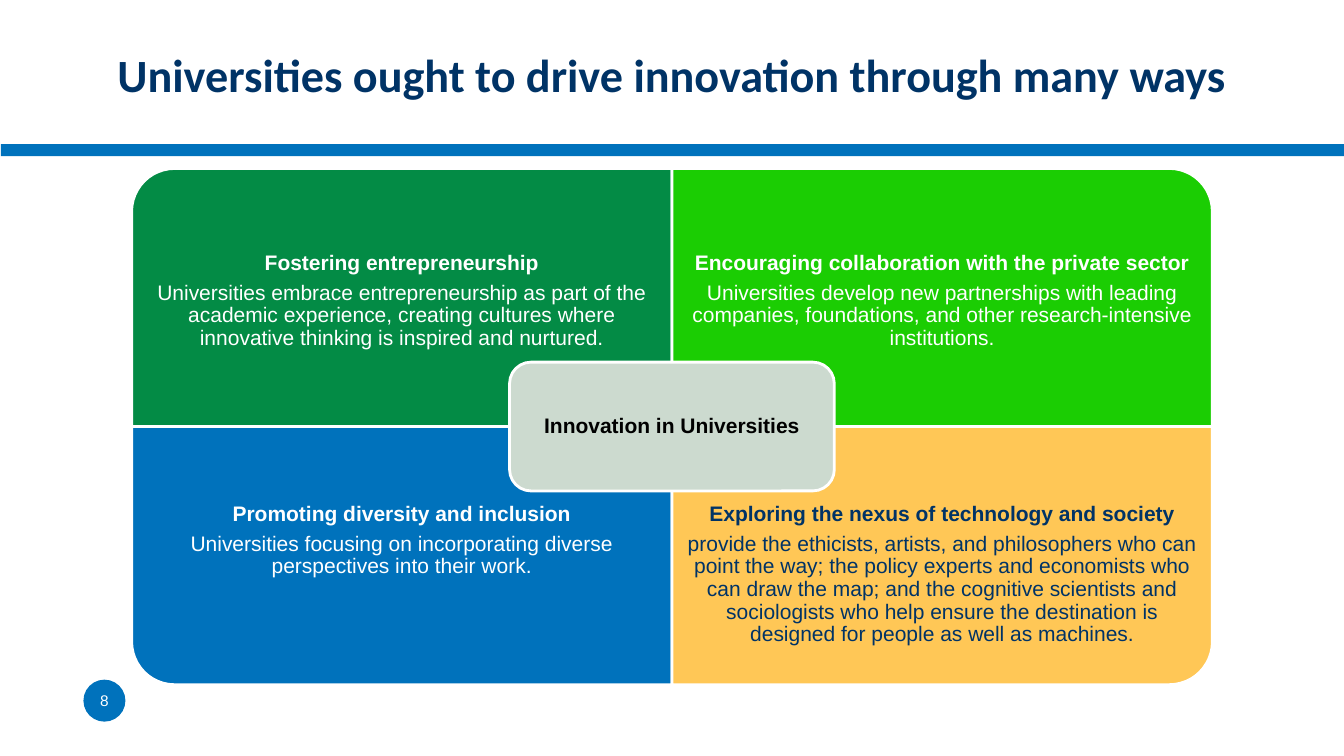
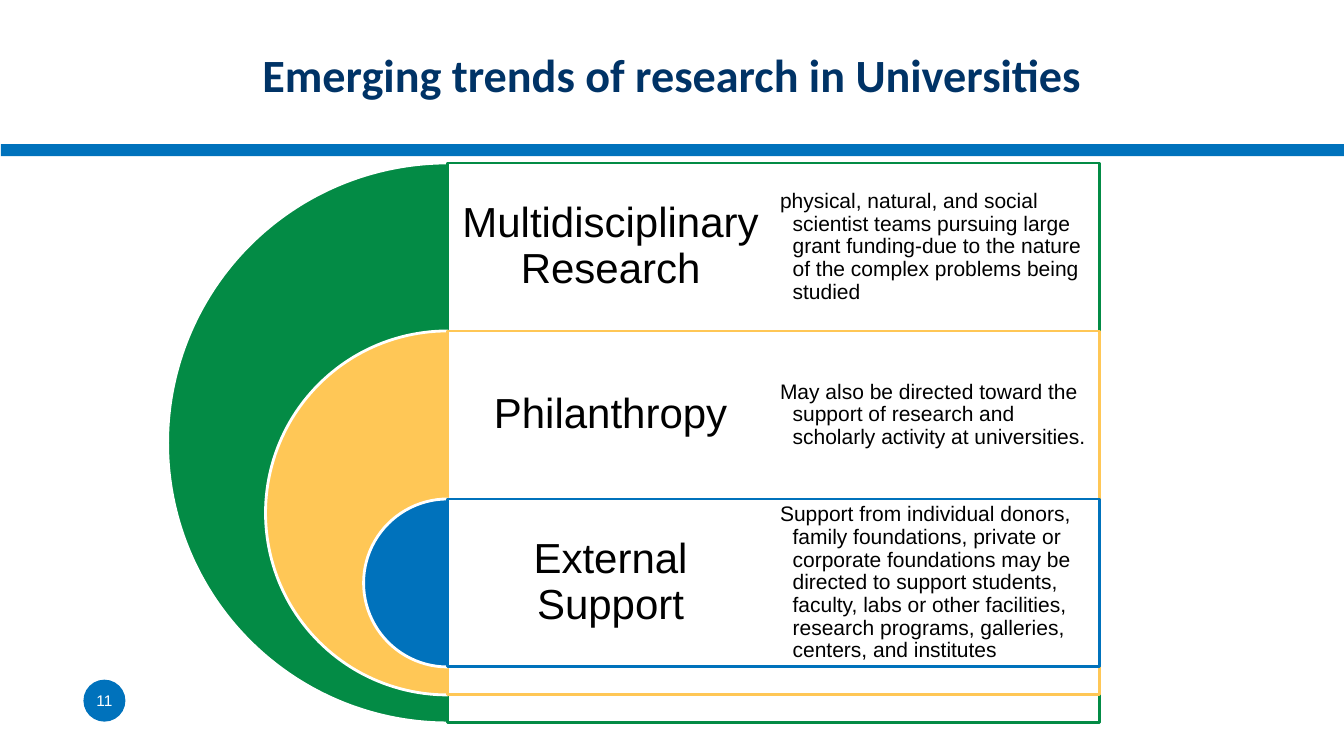
"""Build two slides on innovation and research trends in universities."""
from dataclasses import dataclass

from pptx import Presentation
from pptx import util as u
from pptx.dml.color import RGBColor
from pptx.enum import shapes, text


@dataclass(frozen=True)
class Theme:
    blue: str = "0072BC"
    navy: str = "003366"
    green: str = "038B45"
    lime: str = "1BCD03"
    amber: str = "FFC756"
    sage: str = "CCDACF"
    white: str = "FFFFFF"
    black: str = "000000"
    heading_font: str = "Calibri"
    body_font: str = "Arial"
    title_size: float = 33
    label_size: float = 30
    body_size: float = 15
    number_size: float = 11


theme = Theme()
kinds = shapes.MSO_SHAPE
anchors = text.MSO_ANCHOR
aligns = text.PP_ALIGN
slide_width, slide_height = 960, 540


def add_box(page, kind, place, fill=None, line=None):
    """Add a preset shape, or a text box when kind is None."""
    lengths = [u.Pt(value) for value in place]
    if kind is None:
        return page.shapes.add_textbox(*lengths)
    box = page.shapes.add_shape(kind, *lengths)
    box.shadow.inherit = False
    box.fill.solid()
    box.fill.fore_color.rgb = RGBColor.from_string(fill)
    if line:
        box.line.color.rgb = RGBColor.from_string(line)
        box.line.width = u.Pt(2)
    else:
        box.line.fill.background()
    return box


def write(box, lines, size, color, font=theme.body_font, bold_lines=0, inset=(0, 0),
          anchor=anchors.MIDDLE, align=aligns.CENTER, spacing=0.9, after=0, hanging=0):
    """Write one paragraph per line; inset is (sides, top and bottom)."""
    side, edge = (u.Pt(value) for value in inset)
    frame = box.text_frame
    frame_format = {"word_wrap": True, "vertical_anchor": anchor,
                    "margin_left": side, "margin_right": side,
                    "margin_top": edge, "margin_bottom": edge}
    for name, value in frame_format.items():
        setattr(frame, name, value)
    for index, line in enumerate(lines):
        para = frame.paragraphs[0] if index == 0 else frame.add_paragraph()
        para_format = {"alignment": align, "line_spacing": spacing, "space_after": u.Pt(after)}
        for name, value in para_format.items():
            setattr(para, name, value)
        if hanging:
            properties = para._p.get_or_add_pPr()
            properties.set("marL", str(u.Pt(hanging)))
            properties.set("indent", str(-u.Pt(hanging)))
        span = para.add_run()
        span.text = line
        span_format = {"name": font, "size": u.Pt(size), "bold": index < bold_lines}
        for name, value in span_format.items():
            setattr(span.font, name, value)
        span.font.color.rgb = RGBColor.from_string(color)


deck = Presentation()
deck.slide_width, deck.slide_height = u.Pt(slide_width), u.Pt(slide_height)

pages = []
for number, title in [(8, "Universities ought to drive innovation through many ways"),
                      (11, "Emerging trends of research in Universities")]:
    page = deck.slides.add_slide(deck.slide_layouts[6])
    add_box(page, kinds.RECTANGLE, (0.7, 103, slide_width - 0.7, 8.6), theme.blue)
    badge = add_box(page, kinds.OVAL, (59.6, 485.5, 30, 30), theme.blue)
    write(badge, [str(number)], theme.number_size, theme.white, spacing=1)
    heading = add_box(page, None, (52, 11.5, 856, 83))
    write(heading, [title], theme.title_size, theme.navy, theme.heading_font,
          bold_lines=1, inset=(5, 3), spacing=1)
    pages.append(page)
ways_page, trends_page = pages

center_x, center_y = 480, 304.7
quad_width, quad_height = 386, 184.4
text_height = quad_height * 0.75
ways = [
    (0, 0, 270, theme.green, theme.white, "Fostering entrepreneurship",
     "Universities embrace entrepreneurship as part of the academic experience, creating "
     "cultures where innovative thinking is inspired and nurtured."),
    (1, 0, 0, theme.lime, theme.white, "Encouraging collaboration with the private sector",
     "Universities develop new partnerships with leading companies, foundations, and other "
     "research-intensive institutions."),
    (0, 1, 180, theme.blue, theme.white, "Promoting diversity and inclusion",
     "Universities focusing on incorporating diverse perspectives into their work."),
    (1, 1, 90, theme.amber, theme.navy, "Exploring the nexus of technology and society",
     "provide the ethicists, artists, and philosophers who can point the way; the policy "
     "experts and economists who can draw the map; and the cognitive scientists and "
     "sociologists who help ensure the destination is designed for people as well as machines."),
]
for column, row, turn, fill, color, name, detail in ways:
    left = center_x + (column - 1) * quad_width
    top = center_y + (row - 1) * quad_height
    width, height = (quad_height, quad_width) if turn % 180 else (quad_width, quad_height)
    place = (left + (quad_width - width) / 2, top + (quad_height - height) / 2, width, height)
    quadrant = add_box(ways_page, kinds.ROUND_1_RECTANGLE, place, fill, theme.white)
    quadrant.rotation = turn
    text_top = top + row * (quad_height - text_height)
    caption = add_box(ways_page, None, (left, text_top, quad_width, text_height))
    write(caption, [name, detail], theme.body_size, color, bold_lines=1, inset=(8.5, 8.5),
          anchor=anchors.TOP if row else anchors.BOTTOM, after=5.25)

hub_width, hub_height = 232, 92
hub = add_box(ways_page, kinds.ROUNDED_RECTANGLE,
              (center_x - hub_width / 2, center_y - hub_height / 2, hub_width, hub_height),
              theme.sage, theme.white)
write(hub, ["Innovation in Universities"], theme.body_size, theme.black,
      bold_lines=1, inset=(9, 9), after=5.25)

axis_x, first_top, row_height = 319.7, 116.4, 120
column_width = 233
trends = [
    (400, theme.green, "Multidisciplinary Research",
     "physical, natural, and social scientist teams pursuing large grant funding-due to "
     "the nature of the complex problems being studied"),
    (260, theme.amber, "Philanthropy",
     "May also be directed toward the support of research and scholarly activity at "
     "universities."),
    (120, theme.blue, "External Support",
     "Support from individual donors, family foundations, private or corporate foundations "
     "may be directed to support students, faculty, labs or other facilities, research "
     "programs, galleries, centers, and institutes"),
]
for index, (size, color, name, detail) in enumerate(trends):
    top = first_top + index * row_height
    half_disc = add_box(trends_page, kinds.PIE, (axis_x - size / 2, top, size, size),
                        color, theme.white)
    half_disc.adjustments[0], half_disc.adjustments[1] = 54, 162
    add_box(trends_page, kinds.RECTANGLE, (axis_x, top, 2 * column_width, size),
            theme.white, color)
    label = add_box(trends_page, None, (axis_x, top, column_width, row_height))
    write(label, [name], theme.label_size, theme.black, inset=(8.5, 8.5), after=10.5)
    description = add_box(trends_page, None,
                          (axis_x + column_width, top, column_width, row_height))
    write(description, [detail], theme.body_size, theme.black, inset=(4.5, 4.5),
          align=aligns.LEFT, after=2.25, hanging=9)

deck.save("out.pptx")
